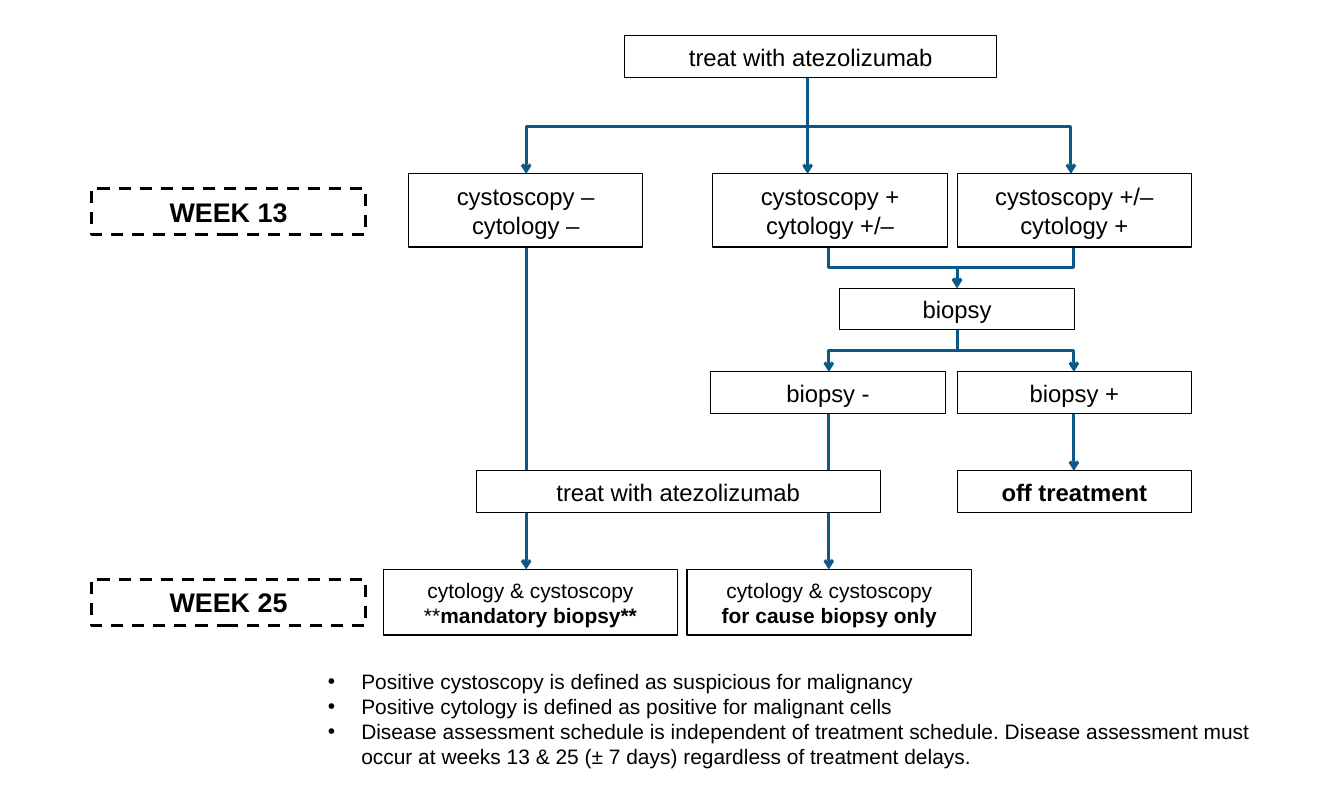
from pptx import Presentation
from pptx.dml.color import RGBColor
from pptx.enum.dml import MSO_LINE
from pptx.enum.shapes import MSO_CONNECTOR, MSO_SHAPE
from pptx.enum.text import MSO_ANCHOR, MSO_AUTO_SIZE, PP_ALIGN
from pptx.oxml.ns import qn
from pptx.oxml.xmlchemy import OxmlElement
from pptx.util import Cm, Pt


def color(code):
    return RGBColor.from_string(code)


def write(para, text, size, bold=False):
    run = para.add_run()
    run.text = text
    font = run.font
    font.name, font.size, font.bold = "Arial", Pt(size), bold
    font.color.rgb = color("000000")


deck = Presentation()
deck.slide_width, deck.slide_height = Cm(31.75), Cm(19.05)
slide = deck.slides.add_slide(deck.slide_layouts[1])
title, body = slide.placeholders
title.element.getparent().remove(title.element)

left, mid, right = 12.43, 19.58, 25.37
links = [
    (19.08, 1.85, left, 4.11),
    (19.08, 1.85, 19.08, 4.11),
    (19.08, 1.85, 25.3, 4.11),
    (mid, 5.84, 22.61, 6.81),
    (right, 5.84, 22.61, 6.81),
    (22.61, 7.8, mid, 8.79),
    (22.61, 7.8, right, 8.79),
    (right, 9.78, right, 11.13),
    (mid, 9.78, mid, 13.46),
    (left, 5.84, left, 13.46),
]
for x1, y1, x2, y2 in links:
    if x1 == x2:
        link = slide.shapes.add_connector(
            MSO_CONNECTOR.STRAIGHT, Cm(x1), Cm(y1), Cm(x2), Cm(y2))
    else:
        cx, cy = (x1 + x2) / 2, (y1 + y2) / 2
        dx, dy = (x2 - x1) / 2, (y2 - y1) / 2
        link = slide.shapes.add_connector(
            MSO_CONNECTOR.ELBOW, Cm(cx - dy), Cm(cy + dx), Cm(cx + dy), Cm(cy - dx))
        link.element.spPr.find(qn("a:xfrm")).set("rot", "5400000")
    link.line.color.rgb = color("0C5986")
    link.line.width = Pt(2)
    tail = OxmlElement("a:tailEnd")
    tail.set("type", "arrow")
    link.line._get_or_add_ln().append(tail)
    link.element.spPr.append(OxmlElement("a:effectLst"))

check = [("cytology & cystoscopy", False)]
treat = [[("treat with atezolizumab", False)]]
boxes = [
    (2.16, 4.45, 6.48, 1.09, 18, [[("WEEK 13", True)]]),
    (2.16, 13.69, 6.48, 1.09, 18, [[("WEEK 25", True)]]),
    (14.76, 0.84, 8.79, 0.99, 16, treat),
    (9.65, 4.11, 5.54, 1.73, 16, [[("cystoscopy –", False)], [("cytology –", False)]]),
    (16.84, 4.11, 5.54, 1.73, 16, [[("cystoscopy +", False)], [("cytology +/–", False)]]),
    (22.61, 4.11, 5.54, 1.73, 16, [[("cystoscopy +/–", False)], [("cytology +", False)]]),
    (19.84, 6.81, 5.54, 0.99, 16, [[("biopsy", False)]]),
    (16.79, 8.79, 5.54, 0.99, 16, [[("biopsy -", False)]]),
    (22.61, 8.79, 5.54, 0.99, 16, [[("biopsy +", False)]]),
    (22.61, 11.13, 5.54, 0.99, 16, [[("off treatment", True)]]),
    (9.07, 13.46, 6.93, 1.55, 14, [check, [("**", False), ("mandatory biopsy**", True)]]),
    (16.23, 13.46, 6.73, 1.55, 14, [check, [("for cause biopsy only", True)]]),
    (11.25, 11.13, 9.55, 0.99, 16, treat),
]
for x, y, wide, high, size, lines in boxes:
    box = slide.shapes.add_shape(MSO_SHAPE.RECTANGLE, Cm(x), Cm(y), Cm(wide), Cm(high))
    box.shadow.inherit = False
    box.fill.background()
    box.line.color.rgb = color("000000")
    box.line.width = Pt(0.75)
    if size == 18:
        box.line.width = Pt(2)
        box.line.dash_style = MSO_LINE.DASH
    frame = box.text_frame
    frame.word_wrap = True
    frame.vertical_anchor = MSO_ANCHOR.MIDDLE
    frame.margin_top = frame.margin_bottom = Cm(0.1)
    for spot, line in enumerate(lines):
        para = frame.add_paragraph() if spot else frame.paragraphs[0]
        para.alignment = PP_ALIGN.CENTER
        for text, bold in line:
            write(para, text, size, bold)
box.fill.solid()
box.fill.fore_color.rgb = color("FFFFFF")

body.left, body.top, body.width, body.height = Cm(7.49), Cm(15.67), Cm(23.16), Cm(3.25)
frame = body.text_frame
frame.word_wrap = True
frame.auto_size = MSO_AUTO_SIZE.NONE
frame.vertical_anchor = MSO_ANCHOR.TOP
notes = [
    "Positive cystoscopy is defined as suspicious for malignancy",
    "Positive cytology is defined as positive for malignant cells",
    "Disease assessment schedule is independent of treatment schedule. Disease assessment "
    "must occur at weeks 13 & 25 (± 7 days) regardless of treatment delays.",
]
for spot, note in enumerate(notes):
    para = frame.add_paragraph() if spot else frame.paragraphs[0]
    para.space_before = Pt(0)
    props = para._p.get_or_add_pPr()
    props.set("marL", str(Cm(0.79)))
    props.set("indent", str(-Cm(0.79)))
    mark = OxmlElement("a:buChar")
    mark.set("char", "•")
    props.append(mark)
    write(para, note, 14)

deck.save("out.pptx")
